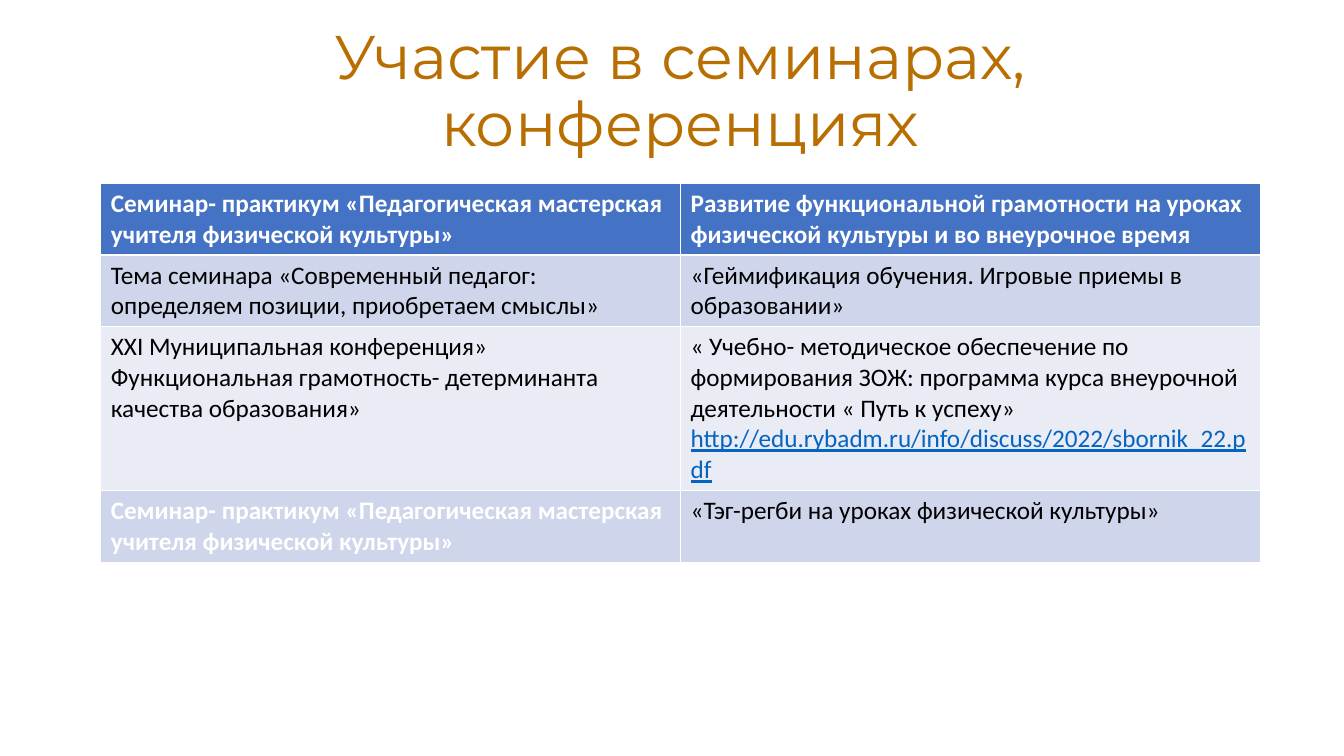
from pptx import Presentation
from pptx.dml.color import RGBColor
from pptx.enum.text import MSO_ANCHOR, PP_ALIGN
from pptx.util import Inches, Pt


def color(code):
    return RGBColor.from_string(code)


def add_run(para, text, tint, form):
    """Append a run with the given colour and font values."""
    run = para.add_run()
    run.text = text
    run.font.color.rgb = color(tint)
    for key, value in form.items():
        setattr(run.font, key, value)


HEAD = {"name": "Montserrat", "size": Pt(44)}
BODY = {"name": "Calibri", "size": Pt(18), "bold": False}
BOLD = BODY | {"bold": True}
LINK = BODY | {"underline": True}
WHITE, BLACK, BLUE = "FFFFFF", "000000", "0563C1"
SEMINAR = "Семинар- практикум «Педагогическая мастерская учителя физической культуры»"

# Each row: height, fill, then the runs of its two cells
ROWS = [
    (0.71, "4472C4", [
        [(SEMINAR, WHITE, BOLD)],
        [("Развитие функциональной грамотности на уроках физической культуры "
          "и во внеурочное время", WHITE, BOLD)]]),
    (0.71, "CFD5EA", [
        [("Тема семинара «Современный педагог: определяем позиции, "
          "приобретаем смыслы»", BLACK, BODY)],
        [("«Геймификация обучения. Игровые приемы в образовании»", BLACK, BODY)]]),
    (1.63, "E9EBF5", [
        [("XXI Муниципальная конференция» Функциональная грамотность- "
          "детерминанта качества образования»", BLACK, BODY)],
        [("« Учебно- методическое обеспечение по формирования ЗОЖ: программа "
          "курса внеурочной деятельности « Путь к успеху» ", BLACK, BODY),
         ("http://edu.rybadm.ru/info/discuss/2022/sbornik_22.pdf", BLUE, LINK)]]),
    (0.71, "CFD5EA", [
        [(SEMINAR, WHITE, BOLD)],
        [("«Тэг-регби на уроках физической культуры»", BLACK, BODY)]]),
]

deck = Presentation()
deck.slide_width, deck.slide_height = Inches(13.33), Inches(7.5)
slide = deck.slides.add_slide(deck.slide_layouts[6])

# Title
title = slide.shapes.add_textbox(Inches(1), Inches(0.2), Inches(11.5), Inches(1.45))
frame = title.text_frame
frame.word_wrap = True
frame.vertical_anchor = MSO_ANCHOR.MIDDLE
para = frame.paragraphs[0]
para.alignment = PP_ALIGN.CENTER
para.line_spacing = 0.9
add_run(para, "Участие в семинарах, конференциях", "B86E00", HEAD)

# Table of seminars and topics
total = sum(height for height, _, _ in ROWS)
table = slide.shapes.add_table(
    len(ROWS), 2, Inches(1), Inches(1.82), Inches(11.5), Inches(total)).table
for row, (height, fill, cells) in enumerate(ROWS):
    table.rows[row].height = Inches(height)
    for col, runs in enumerate(cells):
        cell = table.cell(row, col)
        cell.fill.solid()
        cell.fill.fore_color.rgb = color(fill)
        for text, tint, form in runs:
            add_run(cell.text_frame.paragraphs[0], text, tint, form)

deck.save("out.pptx")
